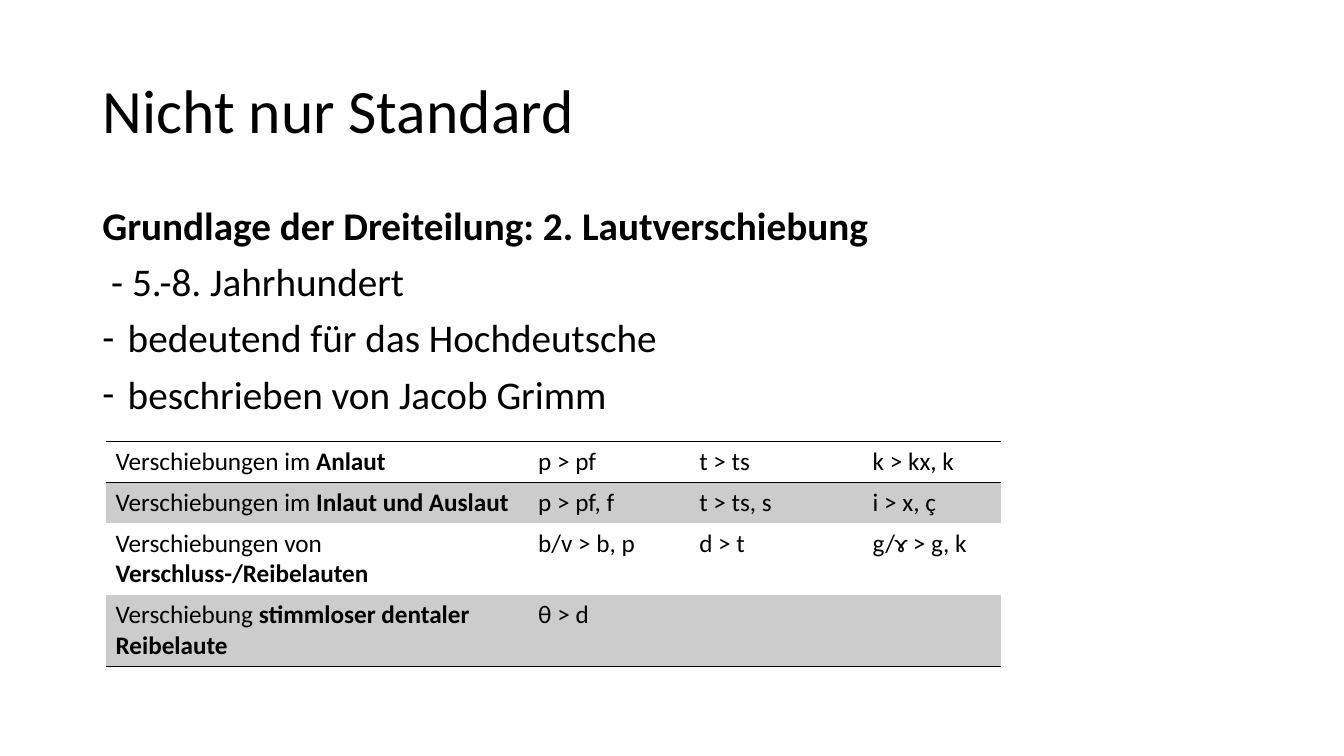
from dataclasses import dataclass
from typing import Optional

from lxml.etree import SubElement
from pptx import Presentation
from pptx.dml.color import RGBColor
from pptx.enum.text import MSO_ANCHOR as Anchor, PP_ALIGN as Align
from pptx.oxml.ns import qn
from pptx.util import Cm, Pt

FONT = "Calibri"
BLACK = "000000"
BAND = "CCCCCC"


@dataclass(frozen=True)
class Statement:
    text: str
    bold: bool = False
    dashed: bool = False


@dataclass(frozen=True)
class SoundShift:
    lead: str
    emphasis: str
    changes: tuple[str, str, str]
    height: float
    banded: bool = False
    top: Optional[str] = None
    bottom: Optional[str] = None


STATEMENTS = [
    Statement("Grundlage der Dreiteilung: 2. Lautverschiebung", bold=True),
    Statement(" - 5.-8. Jahrhundert"),
    Statement("bedeutend für das Hochdeutsche", dashed=True),
    Statement("beschrieben von Jacob Grimm", dashed=True),
]

SHIFTS = [
    SoundShift("Verschiebungen im ", "Anlaut", ("p > pf", "t > ts", "k > kx, k"),
               1.03, top=BLACK, bottom=BLACK),
    SoundShift("Verschiebungen im ", "Inlaut und Auslaut", ("p > pf, f", "t > ts, s", "i > x, ç"),
               1.03, banded=True, top=BLACK),
    SoundShift("Verschiebungen von ", "Verschluss-/Reibelauten", ("b/v > b, p", "d > t", "g/ɤ > g, k"),
               1.81),
    SoundShift("Verschiebung ", "stimmloser dentaler Reibelaute", ("θ > d", "", ""),
               1.81, banded=True, bottom=BLACK),
]
COLUMN_WIDTHS = [10.65, 4.06, 4.37, 3.49]


def colour(code: str) -> RGBColor:
    return RGBColor.from_string(code)


def format_run(run, size: float, bold: bool = False) -> None:
    run.font.name = FONT
    run.font.size = Pt(size)
    run.font.bold = bold
    run.font.color.rgb = colour(BLACK)


def add_dash(paragraph) -> None:
    properties = paragraph._p.get_or_add_pPr()
    properties.set("marL", str(Cm(0.64)))
    properties.set("indent", str(-Cm(0.64)))
    SubElement(properties, qn("a:buFont"), typeface=FONT)
    SubElement(properties, qn("a:buChar"), char="-")


def add_border(cell, side: str, code: Optional[str]) -> None:
    line = SubElement(cell._tc.get_or_add_tcPr(), qn(f"a:ln{side}"), w=str(Pt(1)))
    if code is None:
        SubElement(line, qn("a:noFill"))
    else:
        SubElement(SubElement(line, qn("a:solidFill")), qn("a:srgbClr"), val=code)


def draw_title(slide, text: str) -> None:
    title = slide.shapes.title
    title.left, title.top, title.width, title.height = Cm(2.33), Cm(1.01), Cm(29.21), Cm(3.68)
    title.text_frame.text = text
    title.text_frame.vertical_anchor = Anchor.MIDDLE
    heading = title.text_frame.paragraphs[0]
    heading.alignment = Align.LEFT
    heading.line_spacing = 0.9
    format_run(heading.runs[0], 44)


def draw_statements(slide, statements: list[Statement]) -> None:
    frame = slide.shapes.add_textbox(Cm(2.33), Cm(5.07), Cm(29.21), Cm(12.09)).text_frame
    frame.word_wrap = True
    frame.text = "\n".join(statement.text for statement in statements)
    for paragraph, statement in zip(frame.paragraphs, statements):
        paragraph.line_spacing = 0.9
        paragraph.space_before = Pt(10)
        format_run(paragraph.runs[0], 28, statement.bold)
        if statement.dashed:
            add_dash(paragraph)


def draw_shifts(slide, shifts: list[SoundShift]) -> None:
    table = slide.shapes.add_table(
        len(shifts), len(COLUMN_WIDTHS), Cm(2.66), Cm(11.12),
        Cm(sum(COLUMN_WIDTHS)), Cm(sum(shift.height for shift in shifts)),
    ).table
    table.first_row = False
    table.horz_banding = False
    for column, width in zip(table.columns, COLUMN_WIDTHS):
        column.width = Cm(width)
    for row, shift in zip(table.rows, shifts):
        row.height = Cm(shift.height)
        for cell, text in zip(row.cells, (shift.lead, *shift.changes)):
            cell.text_frame.text = text
            paragraph = cell.text_frame.paragraphs[0]
            paragraph.font.size = Pt(18)
            for run in paragraph.runs:
                format_run(run, 18)
            for side, code in zip("LRTB", (None, None, shift.top, shift.bottom)):
                add_border(cell, side, code)
            if shift.banded:
                cell.fill.solid()
                cell.fill.fore_color.rgb = colour(BAND)
            else:
                cell.fill.background()
        emphasis = row.cells[0].text_frame.paragraphs[0].add_run()
        emphasis.text = shift.emphasis
        format_run(emphasis, 18, bold=True)


def main() -> None:
    deck = Presentation()
    deck.slide_width, deck.slide_height = Cm(33.87), Cm(19.05)
    slide = deck.slides.add_slide(deck.slide_layouts.get_by_name("Title Only"))
    draw_title(slide, "Nicht nur Standard")
    draw_statements(slide, STATEMENTS)
    draw_shifts(slide, SHIFTS)
    deck.save("out.pptx")


if __name__ == "__main__":
    main()
